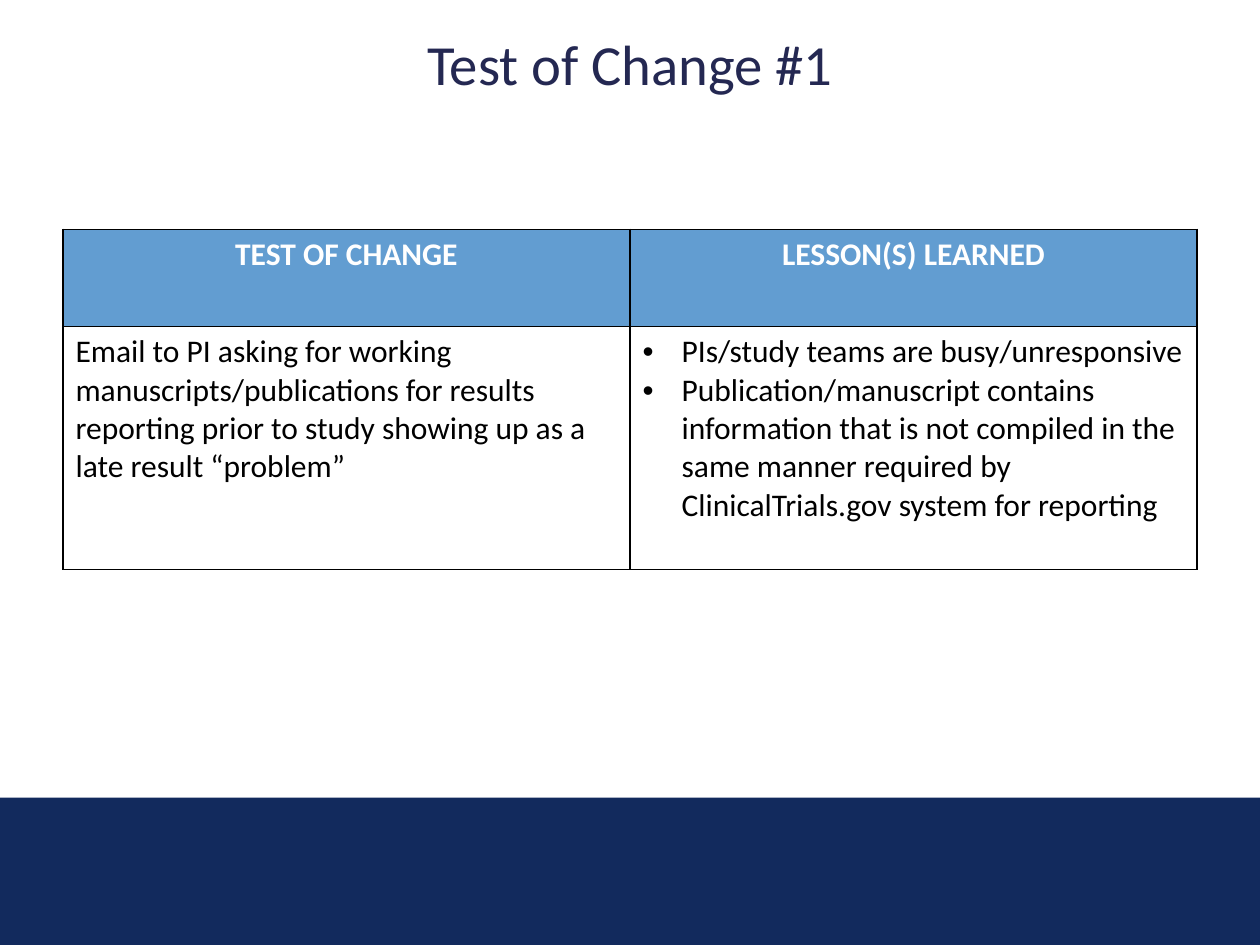
from lxml import etree
from pptx import Presentation
from pptx.dml.color import RGBColor
from pptx.enum import shapes, text
from pptx.oxml import ns
from pptx.util import Inches, Pt

COLORS = {
    "band": "122A5D",
    "title": "242852",
    "header": "629DD1",
    "white": "FFFFFF",
    "black": "000000",
}
HEADERS = ["TEST OF CHANGE", "LESSON(S) LEARNED"]
TEST = (
    "Email to PI asking for working manuscripts/publications for results "
    "reporting prior to study showing up as a late result “problem”"
)
LESSONS = [
    "PIs/study teams are busy/unresponsive",
    "Publication/manuscript contains information that is not compiled in the "
    "same manner required by ClinicalTrials.gov system for reporting",
]


def write(para, words, size=18, color="black", bold=False, align=None, bullet=False):
    if bullet:
        props = para._p.get_or_add_pPr()
        props.set("marL", str(Inches(0.31)))
        props.set("indent", str(-Inches(0.31)))
        etree.SubElement(props, ns.qn("a:buFont"), typeface="Arial")
        etree.SubElement(props, ns.qn("a:buChar"), char="•")
    para.alignment = align
    span = para.add_run()
    span.text = words
    span.font.name = "Calibri"
    span.font.size = Pt(size)
    span.font.bold = bold
    span.font.color.rgb = RGBColor.from_string(COLORS[color])


def style_cell(cell, fill):
    """Give the cell a thin black border on every side and a solid fill."""
    props = cell._tc.get_or_add_tcPr()
    for side in ("lnL", "lnR", "lnT", "lnB"):
        line = etree.SubElement(props, ns.qn(f"a:{side}"), w=str(Pt(1)))
        solid = etree.SubElement(line, ns.qn("a:solidFill"))
        etree.SubElement(solid, ns.qn("a:srgbClr"), val=COLORS["black"])
    cell.fill.solid()
    cell.fill.fore_color.rgb = RGBColor.from_string(COLORS[fill])


deck = Presentation()
deck.slide_width, deck.slide_height = Inches(10), Inches(7.5)
page = deck.slides.add_slide(deck.slide_layouts[5])

band = page.shapes.add_shape(
    shapes.MSO_SHAPE.RECTANGLE, Inches(0), Inches(6.33), Inches(10), Inches(1.17)
)
band.shadow.inherit = False
band.fill.solid()
band.fill.fore_color.rgb = RGBColor.from_string(COLORS["band"])
band.line.fill.background()

title = page.shapes.title
title.left, title.top = Inches(0.5), Inches(0.15)
title.width, title.height = Inches(9), Inches(0.7)
title.text_frame.vertical_anchor = text.MSO_ANCHOR.MIDDLE
write(title.text_frame.paragraphs[0], "Test of Change #1", size=32.4,
      color="title", align=text.PP_ALIGN.CENTER)

table = page.shapes.add_table(
    2, 2, Inches(0.5), Inches(1.82), Inches(9), Inches(2.7)
).table
table.rows[0].height = Inches(0.77)
table.rows[1].height = Inches(1.93)

for column, header in enumerate(HEADERS):
    style_cell(table.cell(0, column), "header")
    style_cell(table.cell(1, column), "white")
    write(table.cell(0, column).text_frame.paragraphs[0], header,
          color="white", bold=True, align=text.PP_ALIGN.CENTER)

write(table.cell(1, 0).text_frame.paragraphs[0], TEST)
lessons = table.cell(1, 1).text_frame
lessons.add_paragraph()
for para, lesson in zip(lessons.paragraphs, LESSONS):
    write(para, lesson, bullet=True)

deck.save("out.pptx")
